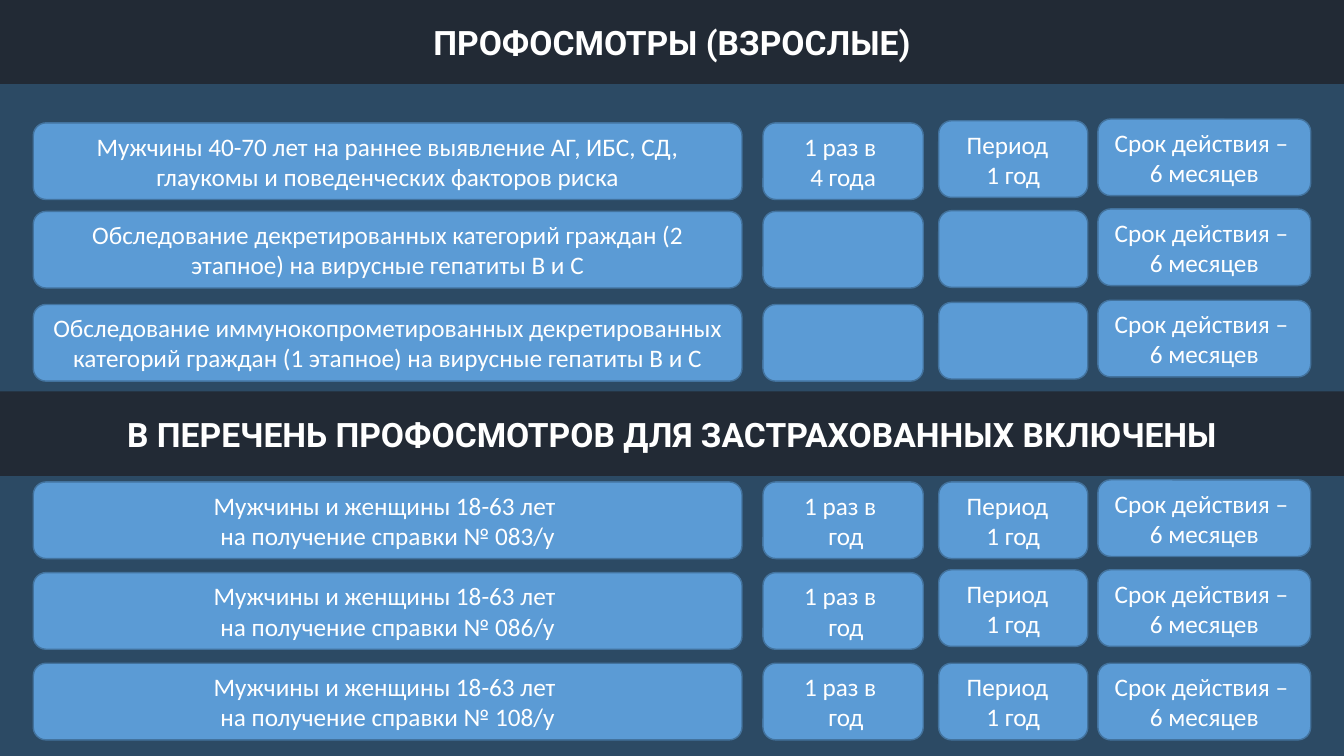
"""Build the slide listing adult preventive check-ups and their validity periods."""
import dataclasses

import pptx
import pptx.dml.color
import pptx.enum.shapes
import pptx.enum.text
import pptx.util

Pt = pptx.util.Pt
RGBColor = pptx.dml.color.RGBColor
RECTANGLE = pptx.enum.shapes.MSO_SHAPE.RECTANGLE
ROUNDED = pptx.enum.shapes.MSO_SHAPE.ROUNDED_RECTANGLE


@dataclasses.dataclass(frozen=True)
class Theme:
    backdrop: str = "2C4A64"
    banner: str = "222A35"
    card: str = "5B9BD5"
    card_line: str = "43739E"
    text: str = "FFFFFF"
    title_font: str = "Roboto"
    body_font: str = "Calibri"
    title_size: int = 24
    body_size: int = 18


theme = Theme()


def add_box(slide, kind, left, top, width, height, fill, line=None):
    shape = slide.shapes.add_shape(kind, Pt(left), Pt(top), Pt(width), Pt(height))
    shape.shadow.inherit = False
    shape.fill.solid()
    shape.fill.fore_color.rgb = RGBColor.from_string(fill)
    if line:
        shape.line.color.rgb = RGBColor.from_string(line)
        shape.line.width = Pt(1)
    else:
        shape.line.fill.background()
    return shape


def write_text(shape, text, font=theme.body_font, size=theme.body_size, bold=False):
    frame = shape.text_frame
    frame.word_wrap = True
    frame.vertical_anchor = pptx.enum.text.MSO_ANCHOR.MIDDLE
    frame.text = text
    for paragraph in frame.paragraphs:
        paragraph.alignment = pptx.enum.text.PP_ALIGN.CENTER
        for run in paragraph.runs:
            run.font.name = font
            run.font.size = Pt(size)
            run.font.bold = bold
            run.font.color.rgb = RGBColor.from_string(theme.text)


presentation = pptx.Presentation()
slide_width, slide_height = 960, 540
presentation.slide_width = Pt(slide_width)
presentation.slide_height = Pt(slide_height)
slide = presentation.slides.add_slide(presentation.slide_layouts[6])

backdrop_top = 52.5
add_box(slide, RECTANGLE, 0, backdrop_top, slide_width, slide_height - backdrop_top, theme.backdrop)

banners = [
    (-0.5, "ПРОФОСМОТРЫ (ВЗРОСЛЫЕ)"),
    (279.5, "В ПЕРЕЧЕНЬ ПРОФОСМОТРОВ ДЛЯ ЗАСТРАХОВАННЫХ ВКЛЮЧЕНЫ"),
]
for top, title in banners:
    banner = add_box(slide, RECTANGLE, 0, top, slide_width, 60.5, theme.banner)
    write_text(banner, title, font=theme.title_font, size=theme.title_size, bold=True)

columns = [(23.75, 506.25), (545, 114.5), (670.5, 106.5), (784.25, 152)]
card_height = 54.75
validity = "Срок действия – \n6 месяцев"
period = "Период  \n1 год"
yearly = "1 раз в \n год"
certificate = "Мужчины и женщины 18-63 лет \nна получение справки № {}/у"

rows = [
    ((87.75, 87.75, 86.25, 85),
     ("Мужчины 40-70 лет на раннее выявление АГ, ИБС, СД, глаукомы и поведенческих факторов риска",
      "1 раз в \n4 года", period, validity)),
    ((151, 151, 150.5, 149.25),
     ("Обследование декретированных категорий граждан (2 этапное) на вирусные гепатиты В и С",
      "", "", validity)),
    ((217.5, 217.5, 216, 214.5),
     ("Обследование иммунокопрометированных декретированных категорий граждан "
      "(1 этапное) на вирусные гепатиты В и С", "", "", validity)),
    ((344.25, 344.25, 344.25, 342.75), (certificate.format("083"), yearly, period, validity)),
    ((409, 409, 407, 407), (certificate.format("086"), yearly, period, validity)),
    ((473.75, 473.75, 473.75, 473.75), (certificate.format("108"), yearly, period, validity)),
]
for tops, texts in rows:
    for (left, width), top, text in zip(columns, tops, texts):
        card = add_box(slide, ROUNDED, left, top, width, card_height, theme.card, theme.card_line)
        if text:
            write_text(card, text)

presentation.save("out.pptx")
